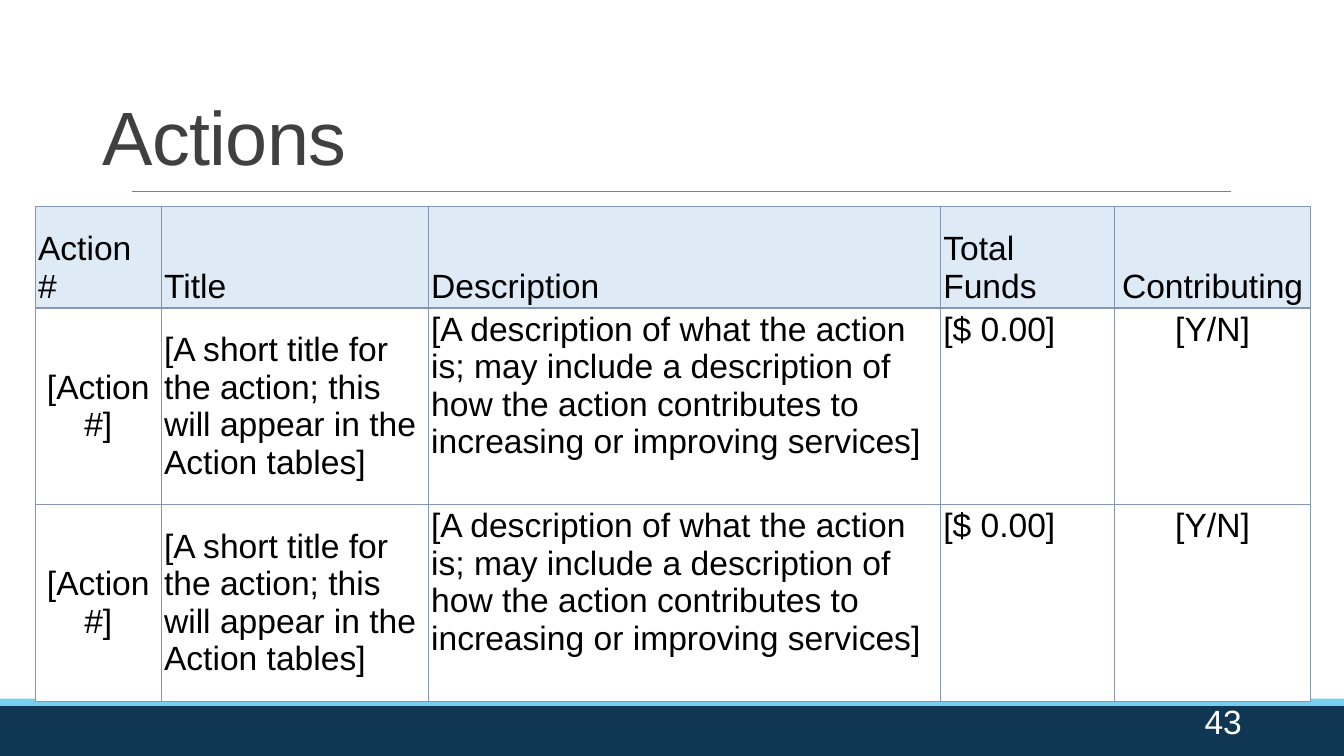
from lxml import etree
from pptx import Presentation
from pptx.dml.color import RGBColor
from pptx.enum.shapes import MSO_CONNECTOR, MSO_SHAPE
from pptx.enum.text import MSO_ANCHOR, PP_ALIGN
from pptx.oxml.ns import qn
from pptx.util import Pt

LEFT, CENTER, RIGHT = PP_ALIGN.LEFT, PP_ALIGN.CENTER, PP_ALIGN.RIGHT
TOP, MIDDLE, BOTTOM = MSO_ANCHOR.TOP, MSO_ANCHOR.MIDDLE, MSO_ANCHOR.BOTTOM

# Content
TITLE = "Actions"
PAGE = "43"
# heading, heading alignment, entry, entry alignment, entry anchor, width
COLUMNS = [
    ("Action #", LEFT, "[Action #]", CENTER, MIDDLE, 90),
    ("Title", LEFT, "[A short title for the action; this will appear in the Action tables]",
     LEFT, MIDDLE, 190.8),
    ("Description", LEFT, "[A description of what the action is; may include a description of "
     "how the action contributes to increasing or improving services]", LEFT, TOP, 365.8),
    ("Total Funds", LEFT, "[$ 0.00]", LEFT, TOP, 124.5),
    ("Contributing", CENTER, "[Y/N]", CENTER, TOP, 139.7),
]
ROW_HEIGHTS = [72.4, 140.5, 140.5]

# Layout and style
WIDTH, HEIGHT = 960, 540
FOOTER_TOP, STRIPE_HEIGHT = 504, 5
TABLE_LEFT, TABLE_TOP = 25.2, 147.6
CELL_MARGIN = 2
FONT = "Arial"
BORDER = "8496B0"


def color(hex_code):
    return RGBColor.from_string(hex_code)


def write(frame, text, size, ink, align, anchor):
    frame.word_wrap = True
    frame.vertical_anchor = anchor
    paragraph = frame.paragraphs[0]
    paragraph.alignment = align
    run = paragraph.add_run()
    run.text = text
    run.font.name = FONT
    run.font.size = Pt(size)
    run.font.color.rgb = color(ink)
    return paragraph


def add_band(top, height, fill):
    band = slide.shapes.add_shape(MSO_SHAPE.RECTANGLE, 0, Pt(top), Pt(WIDTH), Pt(height))
    band.shadow.inherit = False
    band.fill.solid()
    band.fill.fore_color.rgb = color(fill)
    band.line.fill.background()


def add_borders(cell):
    properties = cell._tc.get_or_add_tcPr()
    for index, side in enumerate(("a:lnL", "a:lnR", "a:lnT", "a:lnB")):
        edge = etree.Element(qn(side), w=str(Pt(1)))
        fill = etree.SubElement(edge, qn("a:solidFill"))
        etree.SubElement(fill, qn("a:srgbClr"), val=BORDER)
        properties.insert(index, edge)


def fill_cell(cell, text, align, anchor, fill):
    cell.margin_left = cell.margin_right = Pt(CELL_MARGIN)
    cell.margin_top = cell.margin_bottom = Pt(CELL_MARGIN)
    cell.fill.solid()
    cell.fill.fore_color.rgb = color(fill)
    paragraph = write(cell.text_frame, text, 24, "000000", align, anchor)
    paragraph.space_after = Pt(6)
    cell.vertical_anchor = anchor
    add_borders(cell)


deck = Presentation()
deck.slide_width, deck.slide_height = Pt(WIDTH), Pt(HEIGHT)
slide = deck.slides.add_slide(deck.slide_layouts[5])

# Footer bands and rule under the title
add_band(FOOTER_TOP, HEIGHT - FOOTER_TOP, "0F3753")
add_band(FOOTER_TOP - STRIPE_HEIGHT, STRIPE_HEIGHT, "77CEEF")
rule = slide.shapes.add_connector(MSO_CONNECTOR.STRAIGHT, Pt(94.3), Pt(136.8), Pt(879.1), Pt(136.8))
rule.line.color.rgb = color("808080")
rule.line.width = Pt(0.5)
etree.SubElement(rule._element.spPr, qn("a:effectLst"))

# Title
title = slide.shapes.title
title.left, title.top, title.width, title.height = Pt(66.2), Pt(28.8), Pt(828), Pt(104.4)
heading = write(title.text_frame, TITLE, 54, "404040", LEFT, BOTTOM)
heading.line_spacing = 0.85
heading.runs[0].font._element.set("spc", "-50")

# Actions table
table_width = sum(column[-1] for column in COLUMNS)
actions = slide.shapes.add_table(len(ROW_HEIGHTS), len(COLUMNS), Pt(TABLE_LEFT), Pt(TABLE_TOP),
                                 Pt(table_width), Pt(sum(ROW_HEIGHTS))).table
for row, height in zip(actions.rows, ROW_HEIGHTS):
    row.height = Pt(height)
for c, (name, name_align, entry, entry_align, entry_anchor, width) in enumerate(COLUMNS):
    actions.columns[c].width = Pt(width)
    fill_cell(actions.cell(0, c), name, name_align, BOTTOM, "DEEAF6")
    for r in range(1, len(ROW_HEIGHTS)):
        fill_cell(actions.cell(r, c), entry, entry_align, entry_anchor, "FFFFFF")

# Page number
page_number = slide.shapes.add_textbox(Pt(678.2), Pt(500.4), Pt(216), Pt(28.8))
write(page_number.text_frame, PAGE, 24, "FFFFFF", RIGHT, MIDDLE)

deck.save("out.pptx")
